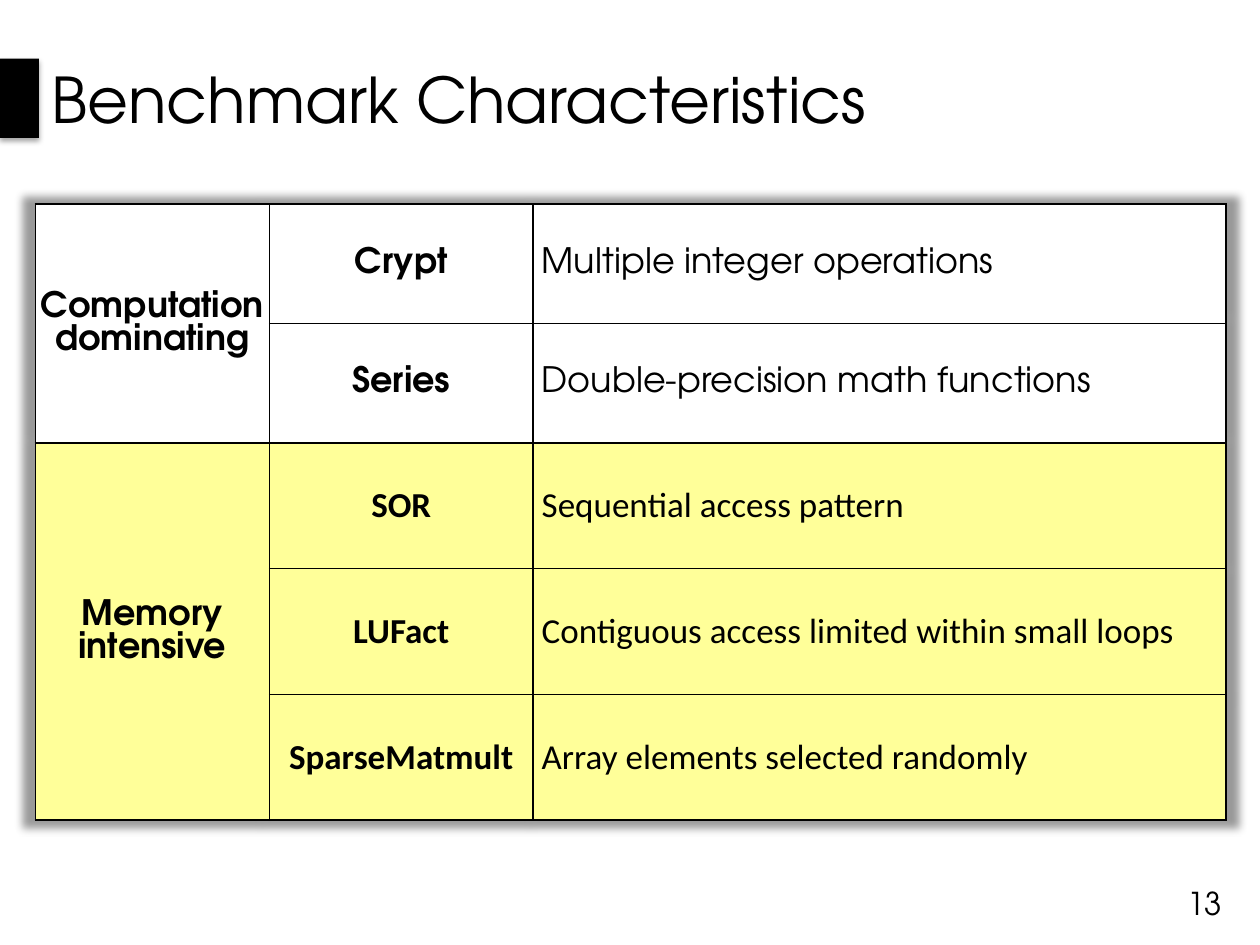
import lxml.etree
import pptx
import pptx.dml.color
import pptx.enum.shapes
import pptx.enum.text
import pptx.oxml.ns
import pptx.util

COLORS = {"ink": "000000", "computation": "FFFFFF", "memory": "FFFF99"}
DISPLAY, BODY = "TeX Gyre Adventor", "Calibri"
ALIGN = pptx.enum.text.PP_ALIGN
MIDDLE = pptx.enum.text.MSO_ANCHOR.MIDDLE
WIDTH, HEIGHT = pptx.util.Inches(10), pptx.util.Inches(7.5)
COLUMNS = (1.86, 2.09, 5.5)
GROUPS = (
    ("Computation dominating", "computation", DISPLAY, 0.95, (
        ("Crypt", "Multiple integer operations"),
        ("Series", "Double-precision math functions"),
    )),
    ("Memory intensive", "memory", BODY, 1, (
        ("SOR", "Sequential access pattern"),
        ("LUFact", "Contiguous access limited within small loops"),
        ("SparseMatmult", "Array elements selected randomly"),
    )),
)


def rgb(name):
    """Return the named palette colour."""
    return pptx.dml.color.RGBColor.from_string(COLORS[name])


def add_child(parent, tag, **attributes):
    """Append a DrawingML element and return it."""
    child = lxml.etree.SubElement(parent, pptx.oxml.ns.qn(tag))
    for key, value in attributes.items():
        child.set(key, str(value))
    return child


def add_shadow(effects, opacity, **geometry):
    """Put a black outer shadow in an effect list."""
    shadow = add_child(effects, "a:outerShdw", **geometry)
    color = add_child(shadow, "a:srgbClr", val=COLORS["ink"])
    add_child(color, "a:alpha", val=opacity * 1000)


def write(frame, text, size, font=DISPLAY, bold=False, align=ALIGN.LEFT):
    """Write one vertically centred paragraph and return it."""
    frame.vertical_anchor = MIDDLE
    paragraph = frame.paragraphs[0]
    paragraph.text = text
    paragraph.alignment = align
    paragraph.font.name = font
    paragraph.font.size = pptx.util.Pt(size)
    paragraph.font.bold = bold
    paragraph.font.color.rgb = rgb("ink")
    return paragraph


def add_header(slide, left, top, width, height):
    """Place the slide title and its black marker in the header box."""
    marker_width = int(width * 0.031)
    title = slide.shapes.add_textbox(
        left + marker_width, top, width - marker_width, height)
    title.text_frame.word_wrap = True
    write(title.text_frame, "Benchmark Characteristics", 36)
    marker = slide.shapes.add_shape(
        pptx.enum.shapes.MSO_SHAPE.RECTANGLE,
        left, top + int(height * 0.3), marker_width, int(height * 0.405))
    marker.fill.solid()
    marker.fill.fore_color.rgb = rgb("ink")
    marker.line.fill.background()
    marker.shadow.inherit = False
    effects = marker._element.spPr.find(pptx.oxml.ns.qn("a:effectLst"))
    add_shadow(effects, 35, blurRad=pptx.util.Pt(3.1),
               dist=pptx.util.Pt(1.8), dir=90 * 60000, rotWithShape=0)


def add_page_number(slide, left, top, width, height):
    """Place the page number on one line at the right of its box."""
    number = slide.shapes.add_textbox(left, top, width, height)
    number.text_frame.word_wrap = False
    number.text_frame.margin_left = 0
    write(number.text_frame, "13", 18, align=ALIGN.RIGHT)


def style_cell(cell, fill):
    """Fill a cell, clear its margins and rule its four sides."""
    cell.margin_left = cell.margin_right = cell.margin_top = cell.margin_bottom = 0
    cell.vertical_anchor = MIDDLE
    properties = cell._tc.get_or_add_tcPr()
    for side in ("a:lnL", "a:lnR", "a:lnT", "a:lnB"):
        border = add_child(properties, side, w=pptx.util.Pt(1))
        add_child(add_child(border, "a:solidFill"), "a:srgbClr", val=COLORS["ink"])
    cell.fill.solid()
    cell.fill.fore_color.rgb = rgb(fill)


def add_benchmarks(slide, left, top, width, height):
    """Place the table of benchmarks grouped by their dominant cost."""
    row_weights = [weight for *_, weight, items in GROUPS for _ in items]
    frame = slide.shapes.add_table(
        len(row_weights), len(COLUMNS), left, top, width, height)
    table = frame.table
    table.first_row = table.horz_banding = False
    effects = lxml.etree.Element(pptx.oxml.ns.qn("a:effectLst"))
    table._tbl.tblPr.insert(0, effects)
    add_shadow(effects, 40, blurRad=pptx.util.Pt(5), sx=102000, sy=102000,
               algn="ctr", rotWithShape=0)
    for column, weight in zip(table.columns, COLUMNS):
        column.width = int(width * weight / sum(COLUMNS))
    for row, weight in zip(table.rows, row_weights):
        row.height = int(height * weight / sum(row_weights))
    first = 0
    for group, fill, font, _, items in GROUPS:
        for index, (benchmark, trait) in enumerate(items, first):
            for cell in table.rows[index].cells:
                style_cell(cell, fill)
            name, description = table.cell(index, 1), table.cell(index, 2)
            write(name.text_frame, benchmark, 20, font, True, ALIGN.CENTER)
            write(description.text_frame, trait, 20, font)
            description.margin_left = pptx.util.Inches(0.07)
        heading = table.cell(first, 0)
        heading.merge(table.cell(first + len(items) - 1, 0))
        label = write(heading.text_frame, group, 20, DISPLAY, True, ALIGN.CENTER)
        label.line_spacing = pptx.util.Pt(19)
        first += len(items)


def main():
    """Build and save the benchmark slide."""
    deck = pptx.Presentation()
    deck.slide_width, deck.slide_height = WIDTH, HEIGHT
    slide = deck.slides.add_slide(deck.slide_layouts[6])
    regions = (
        (add_header, (0, 0, 1, 0.207)),
        (add_page_number, (0.933, 0.929, 0.047, 0.053)),
        (add_benchmarks, (0.028, 0.216, 0.945, 0.652)),
    )
    for place, (left, top, width, height) in regions:
        place(slide, int(WIDTH * left), int(HEIGHT * top),
              int(WIDTH * width), int(HEIGHT * height))
    deck.save("out.pptx")


if __name__ == "__main__":
    main()
